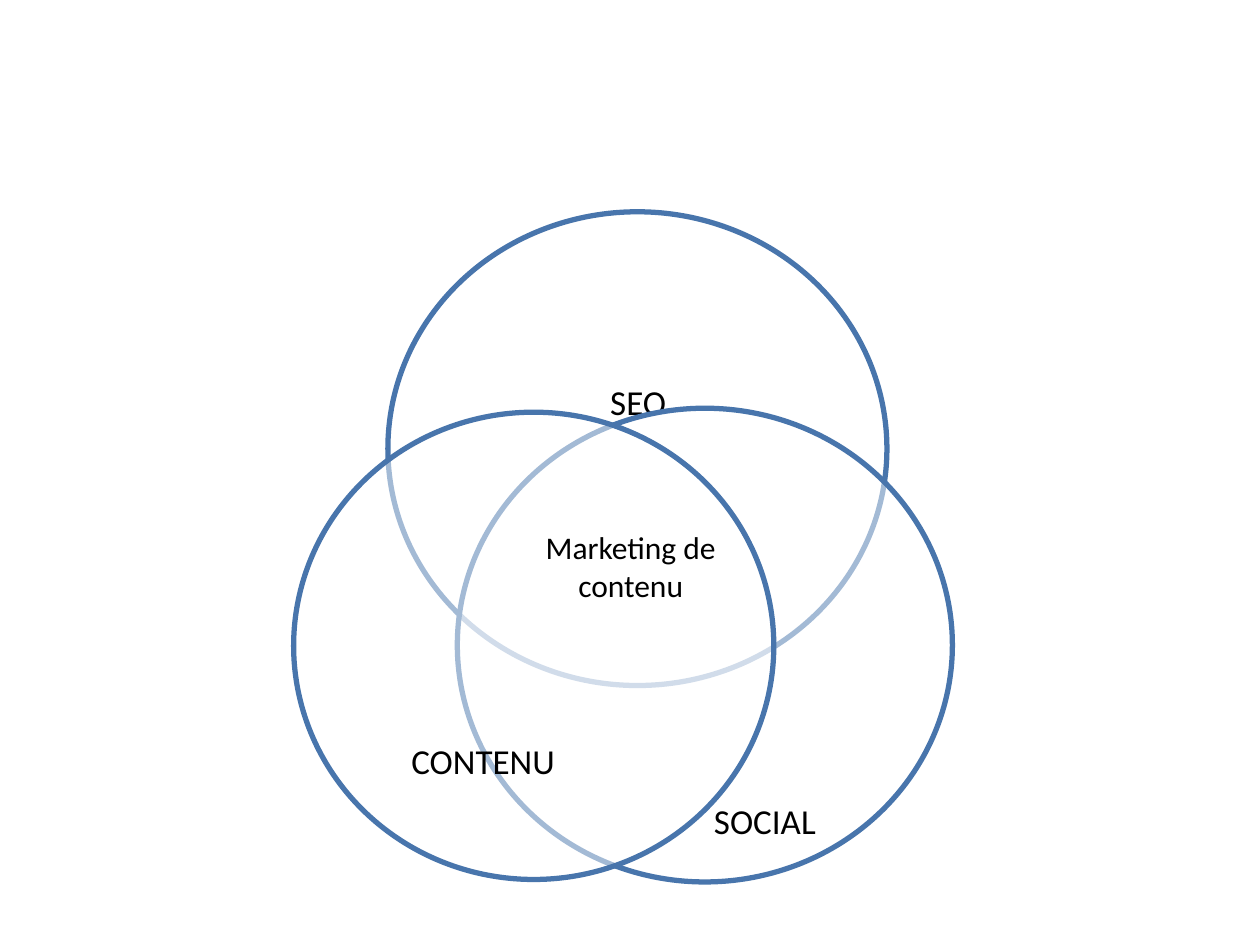
from lxml.etree import SubElement
from pptx import Presentation
from pptx.dml.color import RGBColor
from pptx.enum.shapes import MSO_SHAPE as Shape
from pptx.enum.text import MSO_ANCHOR as Anchor, PP_ALIGN as Align
from pptx.oxml.ns import qn
from pptx.util import Cm, Pt

# Circle box, label, label box within the circle, label anchor; all in cm
RINGS = [
    ((7.82, 4.27, 10.06, 9.55), "SEO", (1.35, 1.68, 7.39, 4.29), Anchor.MIDDLE),
    ((9.22, 8.23, 9.98, 9.55), "SOCIAL", (3.2, 2.46, 6, 6.27), Anchor.BOTTOM),
    ((5.92, 8.31, 9.68, 9.42), "CONTENU", (0.91, 2.44, 5.82, 5), Anchor.BOTTOM),
]
CORE = (10.11, 10.52, 5.21, 1.8)


def color(text):
    return RGBColor.from_string(text)


def add_label(slide, box, text, size, anchor, inset=None):
    frame = slide.shapes.add_textbox(*map(Cm, box)).text_frame
    frame.word_wrap = True
    frame.vertical_anchor = anchor
    if inset is not None:
        frame.margin_left = frame.margin_right = Cm(inset)
        frame.margin_top = frame.margin_bottom = Cm(inset)
    frame.text = text
    line = frame.paragraphs[0]
    line.alignment = Align.CENTER
    font = line.runs[0].font
    font.name, font.size = "Calibri", Pt(size)
    font.color.rgb = color("000000")


def add_ring(slide, box):
    """Draw a half-transparent white circle with a blue outline."""
    ring = slide.shapes.add_shape(Shape.OVAL, *map(Cm, box))
    ring.shadow.inherit = False
    ring.fill.solid()
    ring.fill.fore_color.rgb = color("FFFFFF")
    tint = ring._element.spPr.find(qn("a:solidFill"))[0]
    SubElement(tint, qn("a:alpha"), val="50000")
    ring.line.color.rgb = color("4875AC")
    ring.line.width = Pt(3)


def add_venn(slide):
    for box, text, (dx, dy, width, height), anchor in RINGS:
        add_ring(slide, box)
        spot = (box[0] + dx, box[1] + dy, width, height)
        add_label(slide, spot, text, 20, anchor, inset=0)
    add_label(slide, CORE, "Marketing de contenu", 18, Anchor.TOP)


def main():
    deck = Presentation()
    deck.slide_width, deck.slide_height = Cm(25.4), Cm(19.05)
    add_venn(deck.slides.add_slide(deck.slide_layouts[6]))
    deck.save("out.pptx")


if __name__ == "__main__":
    main()
